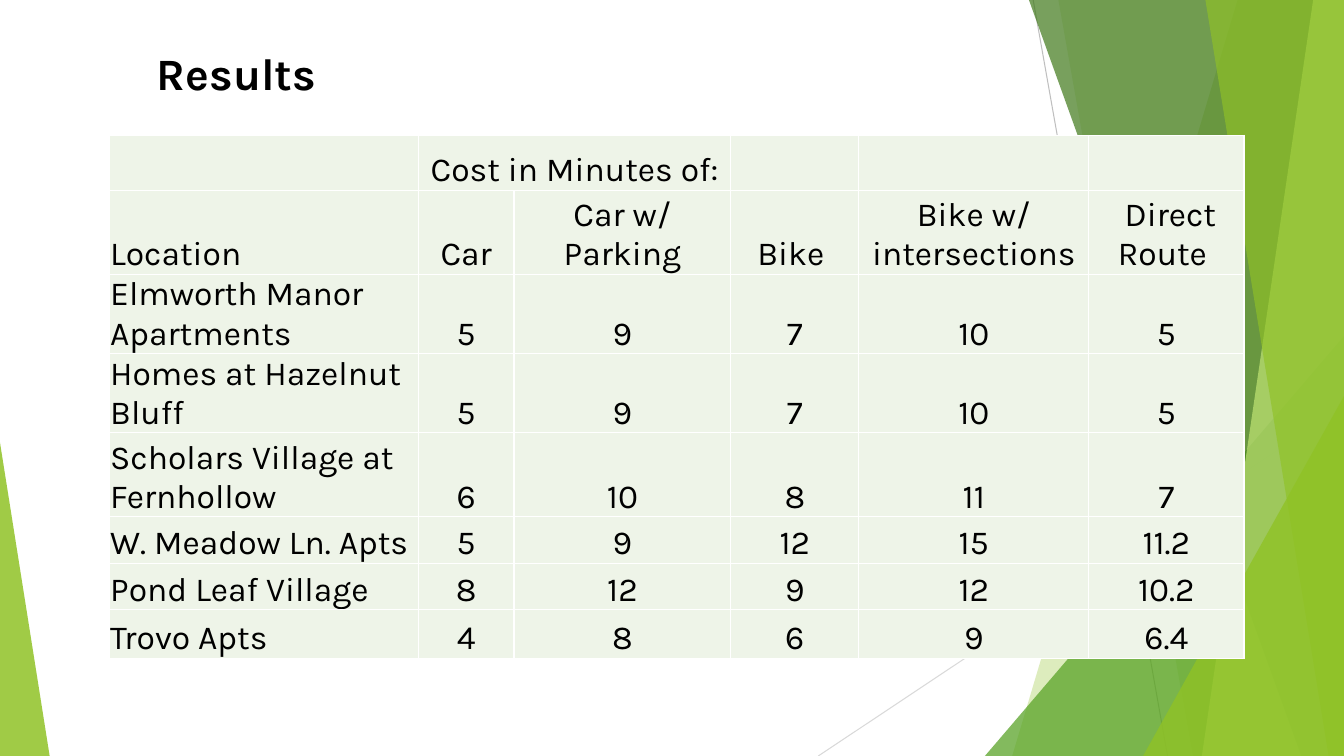
from lxml import etree
from pptx import Presentation
from pptx import util as u
from pptx.dml import color
from pptx.enum import shapes, text
from pptx.oxml import ns

FONT = "Karla"
BLACK = "000000"
WHITE = "FFFFFF"
CELL_GREEN = "EEF4E8"
LIME = "90C226"

COLUMN_WIDTHS = [220.8, 68.4, 154.8, 91.5, 164.2, 111]
ROW_HEIGHTS = [39.2, 60, 33.2, 33.2, 60, 33.2, 33.2, 34.6]
RESULTS = [
    ["", "Cost in Minutes of:", "", "", "", ""],
    ["Location", "Car", "Car w/ Parking", "Bike ", "Bike w/ intersections", " Direct Route "],
    ["Elmworth Manor Apartments", "5", "9", "7", "10", "5"],
    ["Homes at Hazelnut Bluff", "5", "9", "7", "10", "5"],
    ["Scholars Village at Fernhollow", "6", "10", "8", "11", "7"],
    ["W. Meadow Ln. Apts", "5", "9", "12", "15", "11.2"],
    ["Pond Leaf Village", "8", "12", "9", "12", "10.2"],
    ["Trovo Apts", "4", "8", "6", "9", "6.4"],
]


def rgb(hex_code):
    return color.RGBColor.from_string(hex_code)


def paint(shape, hex_code, opacity):
    shape.shadow.inherit = False
    shape.line.fill.background()
    shape.fill.solid()
    shape.fill.fore_color.rgb = rgb(hex_code)
    fill_color = shape.fill._xPr.find(ns.qn("a:solidFill"))[0]
    etree.SubElement(fill_color, ns.qn("a:alpha"), val=str(opacity * 1000))


def format_font(paragraph, size, bold):
    for run in paragraph.runs:
        run.font.name = FONT
        run.font.size = u.Pt(size)
        run.font.bold = bold
        run.font.color.rgb = rgb(BLACK)


def add_thin_line(slide, start, end, hex_code):
    line = slide.shapes.add_connector(
        shapes.MSO_CONNECTOR.STRAIGHT, *[u.Pt(value) for value in start + end])
    line.line.color.rgb = rgb(hex_code)
    line.line.width = u.Pt(0.75)
    etree.SubElement(line._element.spPr, ns.qn("a:effectLst"))


def add_facet(slide, box, top_reach, bottom_reach, hex_code, opacity):
    left, top, width, height = box
    right, bottom = left + width, top + height
    corners = [(right, top), (right, bottom), (right - bottom_reach, bottom)]
    builder = slide.shapes.build_freeform(u.Pt(right - top_reach), u.Pt(top))
    builder.add_line_segments([(u.Pt(x), u.Pt(y)) for x, y in corners], close=True)
    paint(builder.convert_to_shape(), hex_code, opacity)


def add_corner_triangle(slide, box, width, height, at_right, hex_code, opacity):
    left = box[0] + (box[2] - width if at_right else 0)
    top = box[1] + box[3] - height
    triangle = slide.shapes.add_shape(
        shapes.MSO_SHAPE.ISOSCELES_TRIANGLE,
        u.Pt(left), u.Pt(top), u.Pt(width), u.Pt(height))
    triangle.adjustments[0] = 1 if at_right else 0
    paint(triangle, hex_code, opacity)


def add_backdrop(slide, box):
    left, top, width, height = box
    right, bottom = left + width, top + height
    add_thin_line(slide, (right - 222, top), (right - 126, bottom), "BFBFBF")
    add_thin_line(slide, (right, top + 290), (right - 375.5, bottom), "D9D9D9")
    add_facet(slide, box, 76, 237, LIME, 30)
    add_facet(slide, box, 204, 108, LIME, 20)
    add_corner_triangle(slide, box, 256.5, 300, True, "54A021", 72)
    add_facet(slide, box, 225, 30.5, "3F7819", 70)
    add_facet(slide, box, 22, 101.5, "C0E474", 70)
    add_facet(slide, box, 99, 11, LIME, 65)
    add_corner_triangle(slide, box, 143.5, 257, True, LIME, 80)
    add_corner_triangle(slide, box, 35.5, 224, False, LIME, 85)


def add_borders(cell):
    properties = cell._tc.get_or_add_tcPr()
    for position, side in enumerate(["lnL", "lnR", "lnT", "lnB"]):
        border = etree.Element(ns.qn(f"a:{side}"), w=str(u.Pt(1)))
        fill = etree.SubElement(border, ns.qn("a:solidFill"))
        etree.SubElement(fill, ns.qn("a:srgbClr"), val=WHITE)
        properties.insert(position, border)


def fill_cell(cell, wording, centred):
    cell.fill.solid()
    cell.fill.fore_color.rgb = rgb(CELL_GREEN)
    add_borders(cell)
    if not wording:
        return
    cell.vertical_anchor = text.MSO_ANCHOR.BOTTOM
    cell.margin_left = cell.margin_right = cell.margin_top = u.Pt(0.7)
    cell.margin_bottom = 0
    cell.text_frame.text = wording
    paragraph = cell.text_frame.paragraphs[0]
    paragraph.alignment = text.PP_ALIGN.CENTER if centred else text.PP_ALIGN.LEFT
    format_font(paragraph, 24, False)


def add_results_table(slide, box):
    frame = slide.shapes.add_table(
        len(RESULTS), len(COLUMN_WIDTHS), *[u.Pt(value) for value in box])
    table = frame.table
    table.first_row = table.horz_banding = False
    for column, width in zip(table.columns, COLUMN_WIDTHS):
        column.width = u.Pt(width)
    for row, height, wordings in zip(table.rows, ROW_HEIGHTS, RESULTS):
        row.height = u.Pt(height)
        for index, wording in enumerate(wordings):
            fill_cell(row.cells[index], wording, index > 0)
    table.cell(0, 1).merge(table.cell(0, 2))


def add_title(slide, box):
    title = slide.shapes.add_textbox(*[u.Pt(value) for value in box])
    title.text_frame.word_wrap = True
    title.text_frame.auto_size = text.MSO_AUTO_SIZE.SHAPE_TO_FIT_TEXT
    title.text_frame.text = "Results"
    format_font(title.text_frame.paragraphs[0], 32, True)


def main():
    presentation = Presentation()
    presentation.slide_width = u.Pt(960)
    presentation.slide_height = u.Pt(540)
    slide = presentation.slides.add_slide(presentation.slide_layouts[6])
    add_backdrop(slide, (0, 0, 960, 540))
    add_results_table(slide, (78, 96.7, sum(COLUMN_WIDTHS), sum(ROW_HEIGHTS)))
    add_title(slide, (105, 29, 513, 46))
    presentation.save("out.pptx")


if __name__ == "__main__":
    main()
